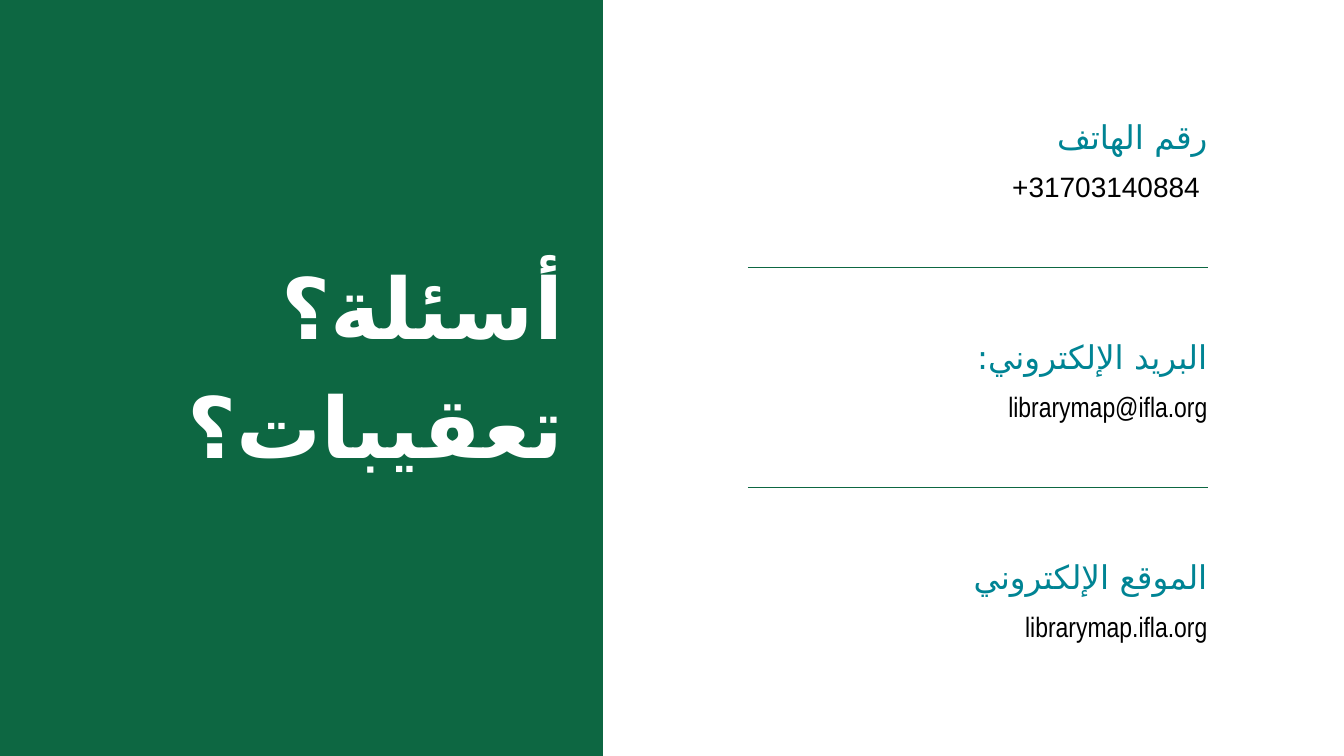
from lxml.etree import SubElement
from pptx import Presentation
from pptx.dml.color import RGBColor
from pptx.enum.shapes import MSO_CONNECTOR as Connector, MSO_SHAPE as Shape
from pptx.enum.text import MSO_ANCHOR as Anchor, PP_ALIGN as Align
from pptx.oxml.ns import qn
from pptx.util import Pt

GREEN = RGBColor(0x0D, 0x67, 0x42)
TEAL = RGBColor(0x00, 0x84, 0x94)
BLACK = RGBColor(0x00, 0x00, 0x00)
WHITE = RGBColor(0xFF, 0xFF, 0xFF)
FONT = "Arial Narrow"
ARABIC_FONT = "DejaVu Sans"
DIGIT_FONT = "Arial"

CONTACTS = [
    ("رقم الهاتف", " 31703140884+"),
    ("البريد الإلكتروني:", "librarymap@ifla.org"),
    ("الموقع الإلكتروني", "librarymap.ifla.org"),
]
CONTACT_STEP = 235.7


def write_text(shape, lines, size, spacing, color, complex_font, bold=False):
    frame = shape.text_frame
    frame.word_wrap = True
    frame.vertical_anchor = Anchor.TOP
    frame.margin_left = frame.margin_top = frame.margin_right = frame.margin_bottom = 0
    frame.text = "\n".join(lines)
    for paragraph in frame.paragraphs:
        paragraph.alignment = Align.RIGHT
        paragraph.line_spacing = Pt(spacing)
        paragraph.space_before = Pt(0)
        paragraph._p.get_or_add_pPr().set("rtl", "1")
        for run in paragraph.runs:
            font = run.font
            font.name, font.size, font.bold = FONT, Pt(size), bold
            font.color.rgb = color
            SubElement(run._r.get_or_add_rPr(), qn("a:cs")).set("typeface", complex_font)


def add_title_panel(slide, left, top, width, height):
    panel = slide.shapes.add_shape(Shape.RECTANGLE, Pt(left), Pt(top), Pt(width), Pt(height))
    panel.shadow.inherit = False
    panel.fill.solid()
    panel.fill.fore_color.rgb = GREEN
    panel.line.fill.background()

    title = slide.shapes.title
    title._element.addprevious(panel._element)
    title.left, title.top = Pt(left + 90.8), Pt(top + 268)
    title.width, title.height = Pt(525.6), Pt(248.4)
    write_text(title, ["أسئلة؟", "تعقيبات؟"], 90.7, 127, WHITE, ARABIC_FONT, bold=True)


def add_contact(slide, left, top, width, label, value):
    parts = [
        (label, 0, 43.2, 35, 45.5, TEAL, ARABIC_FONT),
        (value, 53.7, 39.6, 30, 42, BLACK, DIGIT_FONT),
    ]
    for text, offset, height, size, spacing, color, complex_font in parts:
        box = slide.shapes.add_textbox(Pt(left), Pt(top + offset), Pt(width), Pt(height))
        write_text(box, [text], size, spacing, color, complex_font)


def add_divider(slide, left, top, width):
    divider = slide.shapes.add_connector(
        Connector.STRAIGHT, Pt(left), Pt(top), Pt(left + width), Pt(top))
    divider.line.color.rgb = GREEN
    divider.line.width = Pt(1.5)
    SubElement(divider._element.spPr, qn("a:effectLst"))


def add_contact_list(slide, left, top, width):
    for index, (label, value) in enumerate(CONTACTS):
        contact_top = top + index * CONTACT_STEP
        add_contact(slide, left, contact_top, width, label, value)
        if index < len(CONTACTS) - 1:
            add_divider(slide, left, contact_top + 164.8, width)


def main():
    presentation = Presentation()
    presentation.slide_width, presentation.slide_height = Pt(1440), Pt(810)
    slide = presentation.slides.add_slide(presentation.slide_layouts[5])
    slide.background.fill.solid()
    slide.background.fill.fore_color.rgb = WHITE
    add_title_panel(slide, -13, -13, 659, 836)
    add_contact_list(slide, 801.4, 121.7, 492.5)
    presentation.save("out.pptx")


if __name__ == "__main__":
    main()
